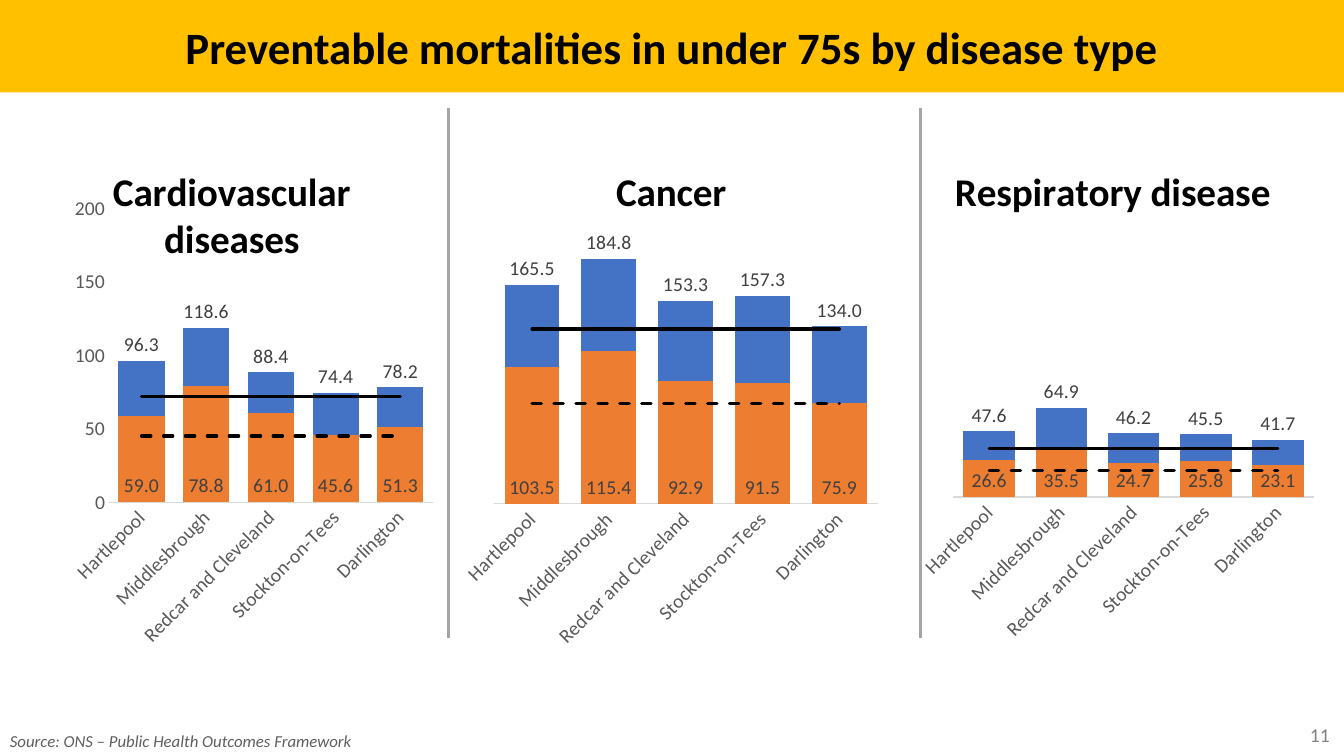
from copy import deepcopy
from lxml import etree
from pptx import Presentation
from pptx.chart.data import CategoryChartData
from pptx.dml.color import RGBColor
from pptx.enum.chart import XL_CHART_TYPE, XL_LABEL_POSITION, XL_TICK_MARK
from pptx.enum.dml import MSO_LINE
from pptx.enum.shapes import MSO_CONNECTOR, MSO_SHAPE
from pptx.enum.text import MSO_ANCHOR, PP_ALIGN
from pptx.oxml.ns import qn
from pptx.util import Pt

COLUMN = XL_CHART_TYPE.COLUMN_CLUSTERED
ABOVE = XL_LABEL_POSITION.OUTSIDE_END
BASE = XL_LABEL_POSITION.INSIDE_BASE
NO_TICK = XL_TICK_MARK.NONE
DASH = MSO_LINE.DASH
STRAIGHT = MSO_CONNECTOR.STRAIGHT
RECT = MSO_SHAPE.RECTANGLE
MIDDLE = MSO_ANCHOR.MIDDLE
LEFT, CENTER, RIGHT = PP_ALIGN.LEFT, PP_ALIGN.CENTER, PP_ALIGN.RIGHT

GOLD = RGBColor(0xFF, 0xC0, 0x00)
BLACK = RGBColor(0, 0, 0)
BLUE = RGBColor(0x44, 0x72, 0xC4)
ORANGE = RGBColor(0xED, 0x7D, 0x31)
DARK = RGBColor(0x40, 0x40, 0x40)
SLATE = RGBColor(0x59, 0x59, 0x59)
SOURCE = RGBColor(0x5F, 0x5F, 0x5F)
GREY = RGBColor(0x80, 0x80, 0x80)
RULE = RGBColor(0xA5, 0xA5, 0xA5)
PALE = RGBColor(0xD9, 0xD9, 0xD9)

FONT = "Calibri"
TOWNS = ["Hartlepool", "Middlesbrough", "Redcar and Cleveland",
         "Stockton-on-Tees", "Darlington"]
PANELS = [
    ("Cardiovascular diseases", 10.8, (0.217, 0.129, 0.747, 0.569),
     [96.3, 118.6, 88.4, 74.4, 78.2], [59, 78.8, 61, 45.6, 51.3], 72, 45),
    ("Cancer", 324.7, (0.09, 0.188, 0.887, 0.513),
     [165.5, 184.8, 153.3, 157.3, 134], [103.5, 115.4, 92.9, 91.5, 75.9],
     132, 76),
    ("Respiratory disease", 640, (0.132, 0.154, 0.833, 0.534),
     [47.6, 64.9, 46.2, 45.5, 41.7], [26.6, 35.5, 24.7, 25.8, 23.1], 35, 19),
]


def style(font, size, color, bold=False, italic=False):
    """Set the look of a font."""
    font.name, font.size = FONT, Pt(size)
    font.bold, font.italic = bold, italic
    font.color.rgb = color


def node(parent, tag, val=None):
    """Append a chart element, with a value if given."""
    item = etree.SubElement(parent, qn(tag))
    if val is not None:
        item.set("val", val)
    return item


def banner(slide, box, text):
    """Draw the coloured title band."""
    band = slide.shapes.add_shape(RECT, *map(Pt, box))
    band.shadow.inherit = False
    band.fill.solid()
    band.fill.fore_color.rgb = GOLD
    band.line.fill.background()
    band.text_frame.vertical_anchor = MIDDLE
    para = band.text_frame.paragraphs[0]
    para.text, para.alignment = text, CENTER
    style(para.font, 32, BLACK, bold=True)


def note(slide, box, text, size, color, align, italic=False, wrap=True):
    """Place a small line of text."""
    frame = slide.shapes.add_textbox(*map(Pt, box)).text_frame
    frame.word_wrap = wrap
    frame.vertical_anchor = MIDDLE
    para = frame.paragraphs[0]
    para.text, para.alignment = text, align
    style(para.font, size, color, italic=italic)


def divide(slide, x, top, end):
    """Draw an upright rule between panels."""
    rule = slide.shapes.add_connector(STRAIGHT, Pt(x), Pt(top), Pt(x), Pt(end))
    rule.line.color.rgb, rule.line.width = RULE, Pt(2)
    etree.SubElement(rule._element.spPr, qn("a:effectLst"))


def combine(chart):
    """Turn the last two column series into lines."""
    bars = chart._chartSpace.find(".//" + qn("c:barChart"))
    lines = etree.Element(qn("c:lineChart"))
    node(lines, "c:grouping", "standard")
    node(lines, "c:varyColors", "0")
    for ser in bars.findall(qn("c:ser"))[2:]:
        for flag in ser.findall(qn("c:invertIfNegative")):
            ser.remove(flag)
        lines.append(ser)
        shape = ser.find(qn("c:spPr"))
        shape.find(qn("a:ln")).set("cap", "rnd")
        mark = etree.Element(qn("c:marker"))
        node(mark, "c:symbol", "none")
        shape.addnext(mark)
        node(ser, "c:smooth", "0")
    node(lines, "c:marker", "1")
    for axis in bars.findall(qn("c:axId")):
        lines.append(deepcopy(axis))
    bars.addnext(lines)


def frame_plot(chart, area):
    """Fix the inner plot area as shares of the chart."""
    plot = chart._chartSpace.find(".//" + qn("c:plotArea"))
    for old in plot.findall(qn("c:layout")):
        plot.remove(old)
    layout = etree.Element(qn("c:layout"))
    manual = node(layout, "c:manualLayout")
    node(manual, "c:layoutTarget", "inner")
    for key in "xy":
        node(manual, f"c:{key}Mode", "edge")
    for key, share in zip("xywh", area):
        node(manual, f"c:{key}", str(share))
    plot.insert(0, layout)


def panel(slide, box, title, area, total, part, solid, dashed, scale):
    """Draw one disease chart with its two reference lines."""
    data = CategoryChartData(number_format="0.0")
    data.categories = TOWNS
    count = len(TOWNS)
    rows = [total, part, [solid] * count, [dashed] * count]
    for num, row in enumerate(rows, 1):
        data.add_series(f"Series {num}", row)
    chart = slide.shapes.add_chart(COLUMN, *map(Pt, box), data).chart
    style(chart.font, 14, BLACK)
    chart.has_legend = False
    chart.has_title = True
    para = chart.chart_title.text_frame.paragraphs[0]
    para.text = title
    style(para.font, 28, BLACK, bold=True)

    towns, rates = chart.category_axis, chart.value_axis
    for axis in (towns, rates):
        axis.major_tick_mark = axis.minor_tick_mark = NO_TICK
        axis.has_major_gridlines = False
        style(axis.tick_labels.font, 14, SLATE)
    towns.format.line.color.rgb = PALE
    towns.format.line.width = Pt(0.75)
    rates.minimum_scale, rates.maximum_scale = 0, 200
    rates.major_unit = 50
    rates.tick_labels.number_format = "0"
    rates.tick_labels.number_format_is_linked = False
    rates.format.line.fill.background()
    rates.visible = scale

    plot = chart.plots[0]
    plot.vary_by_categories = False
    plot.gap_width, plot.overlap = 40, 100
    bars = list(plot.series)
    for ser, color, spot in zip(bars, (BLUE, ORANGE), (ABOVE, BASE)):
        ser.format.fill.solid()
        ser.format.fill.fore_color.rgb = color
        labels = ser.data_labels
        labels.show_value = True
        labels.number_format = "0.0"
        labels.number_format_is_linked = False
        labels.position = spot
        style(labels.font, 14, DARK)
    for ser in bars[2:]:
        ser.format.line.color.rgb = BLACK
        ser.format.line.width = Pt(2.25)
    bars[3].format.line.dash_style = DASH
    combine(chart)
    frame_plot(chart, area)


def main():
    """Build and save the slide."""
    deck = Presentation()
    deck.slide_width, deck.slide_height = Pt(960), Pt(540)
    slide = deck.slides.add_slide(deck.slide_layouts[6])
    banner(slide, (0, 0, 960, 66), "Preventable mortalities in under 75s by disease type")
    for num, (title, x, *rest) in enumerate(PANELS):
        panel(slide, (x, 101.5, 309.5, 368.6), title, *rest, scale=num == 0)
    for x in (320.4, 657.4):
        divide(slide, x, 77, 456)
    note(slide, (0, 518.4, 261.4, 21.6), "Source: ONS – Public Health Outcomes Framework",
         12, SOURCE, LEFT, italic=True, wrap=False)
    note(slide, (741, 510.5, 216, 28.8), "11", 14, GREY, RIGHT)
    deck.save("out.pptx")


if __name__ == "__main__":
    main()
